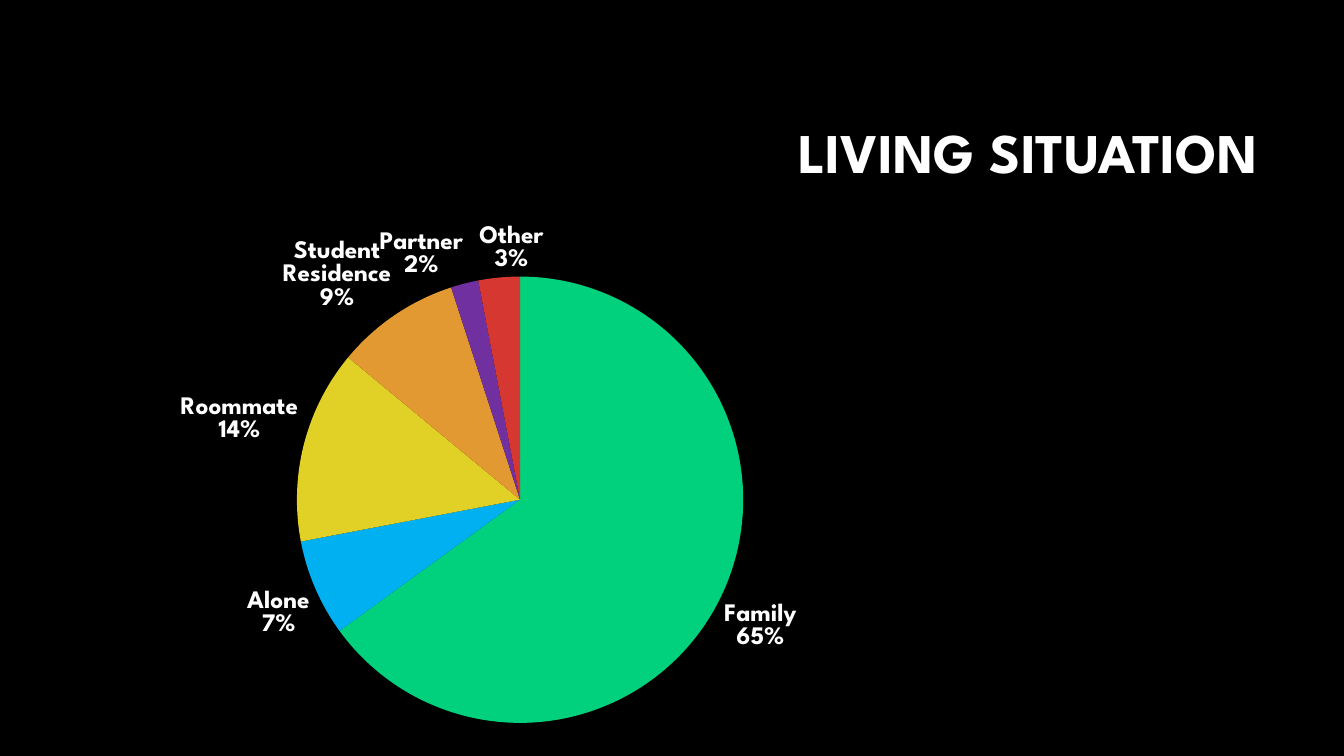
import copy
from dataclasses import dataclass
from typing import Any

import pptx
import pptx.chart.data
import pptx.dml.color
import pptx.enum.chart
import pptx.enum.text
import pptx.oxml
import pptx.oxml.ns
import pptx.util

Cm = pptx.util.Cm
FONT = "League Spartan"
CHART_NAMESPACE = pptx.oxml.ns.nsdecls("c")
COLOURS = {
    "background": "000000",
    "text": "FFFFFF",
    "green": "01D17D",
    "blue": "00B0F0",
    "yellow": "E1D126",
    "orange": "E29932",
    "purple": "7030A0",
    "red": "D63731",
}
PLOT_LAYOUT = {"x": 0.28, "y": 0.13, "w": 0.5, "h": 0.84}


@dataclass(frozen=True)
class Slice:
    name: str
    share: int
    colour: str
    label_shift: float = 0


SLICES = [
    Slice("Family", 65, "green"),
    Slice("Alone", 7, "blue"),
    Slice("Roommate", 14, "yellow"),
    Slice("Student Residence", 9, "orange"),
    Slice("Partner", 2, "purple"),
    Slice("Other", 3, "red", label_shift=0.05),
]


def colour(name: str) -> pptx.dml.color.RGBColor:
    return pptx.dml.color.RGBColor.from_string(COLOURS[name])


def apply(target: Any, values: dict[str, Any]) -> None:
    for name, value in values.items():
        setattr(target, name, value)


def format_font(font: Any, size: int, bold: bool) -> None:
    apply(font, {"name": FONT, "size": pptx.util.Pt(size), "bold": bold})
    font.color.rgb = colour("text")


def add_title(page: Any, text: str) -> None:
    box = page.shapes.title
    apply(box, {"left": Cm(17.7), "top": Cm(2.13), "width": Cm(14.25), "height": Cm(3.58)})
    apply(box.text_frame, {
        "text": text,
        "word_wrap": True,
        "vertical_anchor": pptx.enum.text.MSO_ANCHOR.MIDDLE,
    })
    para = box.text_frame.paragraphs[0]
    apply(para, {"alignment": pptx.enum.text.PP_ALIGN.RIGHT, "line_spacing": 0.9})
    format_font(para.runs[0].font, 40, True)


def place_plot(chart: Any) -> None:
    plot_area = chart.element.xpath("//c:plotArea")[0]
    for layout in plot_area.xpath("c:layout"):
        plot_area.remove(layout)
    modes = '<c:xMode val="edge"/><c:yMode val="edge"/>'
    sizes = "".join(f'<c:{key} val="{value}"/>' for key, value in PLOT_LAYOUT.items())
    plot_area.insert(0, pptx.oxml.parse_xml(
        f'<c:layout {CHART_NAMESPACE}><c:manualLayout>'
        f'<c:layoutTarget val="inner"/>{modes}{sizes}</c:manualLayout></c:layout>'
    ))


def format_labels(chart: Any, series: Any) -> None:
    labels = series.data_labels
    apply(labels, {
        "show_category_name": True,
        "show_percentage": True,
        "show_value": False,
        "number_format": "0%",
        "number_format_is_linked": False,
        "position": pptx.enum.chart.XL_LABEL_POSITION.OUTSIDE_END,
    })
    format_font(labels.font, 18, True)
    separator = pptx.oxml.parse_xml(f"<c:separator {CHART_NAMESPACE}>\n</c:separator>")
    chart.element.xpath("//c:ser/c:dLbls/c:showBubbleSize")[0].addnext(separator)


def shift_labels(chart: Any, slices: list[Slice]) -> None:
    labels = chart.element.xpath("//c:ser/c:dLbls")[0]
    shared = labels.xpath("*[not(self::c:showLeaderLines)]")
    shifted = [(index, item) for index, item in enumerate(slices) if item.label_shift]
    for place, (index, item) in enumerate(shifted):
        label = pptx.oxml.parse_xml(
            f'<c:dLbl {CHART_NAMESPACE}><c:idx val="{index}"/><c:layout><c:manualLayout>'
            f'<c:x val="{item.label_shift}"/><c:y val="0"/>'
            f'</c:manualLayout></c:layout></c:dLbl>'
        )
        label.extend(copy.deepcopy(shared))
        labels.insert(place, label)


def add_pie(page: Any, slices: list[Slice]) -> None:
    data = pptx.chart.data.CategoryChartData()
    data.categories = [item.name for item in slices]
    data.add_series("Series 1", [item.share for item in slices])
    chart = page.shapes.add_chart(
        pptx.enum.chart.XL_CHART_TYPE.PIE,
        Cm(1.07), Cm(5.23), Cm(22.71), Cm(13.39), data,
    ).chart
    apply(chart, {"has_legend": False, "has_title": False})
    format_font(chart.font, 10, False)
    chart.plots[0].vary_by_categories = True
    series = chart.plots[0].series[0]
    for index, item in enumerate(slices):
        look = series.points[index].format
        look.fill.solid()
        look.fill.fore_color.rgb = colour(item.colour)
        look.line.fill.background()
    format_labels(chart, series)
    shift_labels(chart, slices)
    place_plot(chart)


def main() -> None:
    deck = pptx.Presentation()
    apply(deck, {"slide_width": Cm(33.87), "slide_height": Cm(19.05)})
    page = deck.slides.add_slide(deck.slide_layouts[5])
    page.background.fill.solid()
    page.background.fill.fore_color.rgb = colour("background")
    add_title(page, "LIVING SITUATION")
    add_pie(page, SLICES)
    deck.save("out.pptx")


if __name__ == "__main__":
    main()
